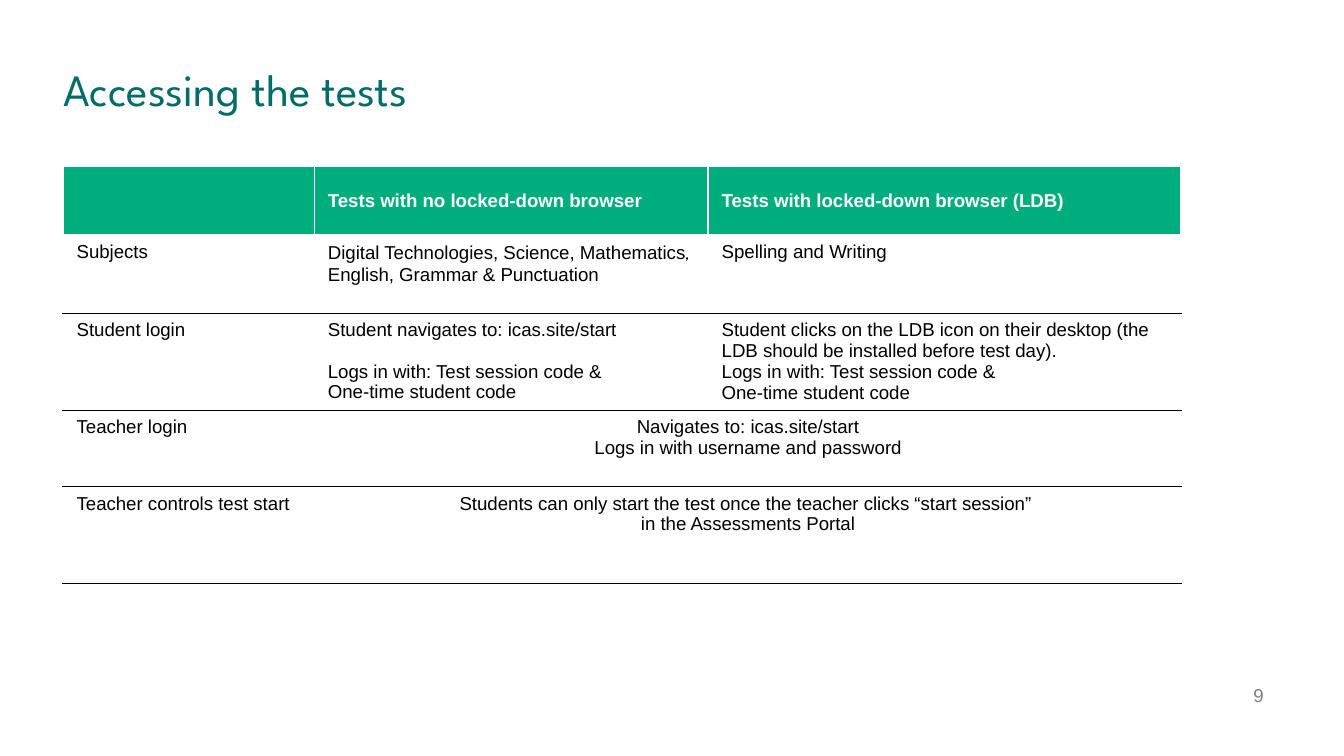
import pptx
import pptx.util
import pptx.dml.color
import pptx.enum.text
import pptx.oxml
import pptx.oxml.ns

Inches = pptx.util.Inches
Pt = pptx.util.Pt
ALIGN = pptx.enum.text.PP_ALIGN
ANCHOR = pptx.enum.text.MSO_ANCHOR

COLORS = {
    "white": "FFFFFF",
    "black": "000000",
    "header": "00AD7D",
    "title": "006D68",
    "number": "808080",
}
SLIDE_WIDTH = 10
SLIDE_HEIGHT = SLIDE_WIDTH * 9 / 16
LEFT = 0.47
COLUMN_WIDTHS = [1.87, 2.93, 3.52]
ROW_HEIGHTS = [0.51, 0.58, 0.71, 0.57, 0.72]

HEADINGS = ["", "Tests with no locked-down browser", "Tests with locked-down browser (LDB)"]
LOGIN_CODES = ["Logs in with: Test session code &", "One-time student code"]
# One entry per row: label, then the cells beside it; a single cell spans both columns.
# A line is a string or a list of (text, font) runs.
ROWS = [
    ("Subjects",
     [[("Digital Technologies, Science, Mathematics", "Arial"), (", ", "Cabin"),
       ("English, Grammar & Punctuation", "Arial")]],
     ["Spelling and Writing"]),
    ("Student login",
     ["Student navigates to: icas.site/start"] + LOGIN_CODES,
     ["Student clicks on the LDB icon on their desktop (the LDB should be "
      "installed before test day)."] + LOGIN_CODES),
    ("Teacher login",
     ["Navigates to: icas.site/start", "Logs in with username and password"]),
    ("Teacher controls test start",
     ["Students can only start the test once the teacher clicks “start session” ",
      "in the Assessments Portal"]),
]


def rgb(name):
    return pptx.dml.color.RGBColor.from_string(COLORS[name])


def write_text(frame, lines, size=10, font="Arial", color="black", bold=False,
               align=ALIGN.LEFT, anchor=ANCHOR.TOP):
    frame.word_wrap = True
    frame.vertical_anchor = anchor
    for index, line in enumerate(lines):
        paragraph = frame.add_paragraph() if index else frame.paragraphs[0]
        paragraph.alignment = align
        for text, face in [(line, font)] if isinstance(line, str) else line:
            run = paragraph.add_run()
            run.text = text
            run.font.name = face
            run.font.size = Pt(size)
            run.font.bold = bold
            run.font.color.rgb = rgb(color)


def set_borders(cell, **sides):
    """Each side is a (colour, points) pair, given in the order L, R, T, B."""
    properties = cell._tc.get_or_add_tcPr()
    for index, (side, (color, points)) in enumerate(sides.items()):
        properties.insert(index, pptx.oxml.parse_xml(
            f'<a:ln{side} {pptx.oxml.ns.nsdecls("a")} w="{Pt(points)}"><a:solidFill>'
            f'<a:srgbClr val="{COLORS[color]}"/></a:solidFill></a:ln{side}>'))


def format_cell(cell, fill, top, bottom):
    cell.fill.solid()
    cell.fill.fore_color.rgb = rgb(fill)
    side = ("white", 1)
    set_borders(cell, L=side, R=side, T=top, B=bottom)


def add_title(slide, text):
    title = slide.shapes.title
    title.left, title.top = Inches(LEFT), Inches(0.46)
    title.width, title.height = Inches(8.61), Inches(0.4)
    frame = title.text_frame
    frame.margin_left = frame.margin_top = frame.margin_right = frame.margin_bottom = 0
    write_text(frame, [text], size=24, font="League Spartan", color="title")


def add_access_table(slide):
    table = slide.shapes.add_table(
        len(ROW_HEIGHTS), len(COLUMN_WIDTHS), Inches(LEFT), Inches(1.24),
        Inches(sum(COLUMN_WIDTHS)), Inches(sum(ROW_HEIGHTS))).table
    for column, width in zip(table.columns, COLUMN_WIDTHS):
        column.width = Inches(width)
    for row, height in zip(table.rows, ROW_HEIGHTS):
        row.height = Inches(height)

    # Header row
    white_line, rule = ("white", 1), ("black", 0.25)
    for column, heading in enumerate(HEADINGS):
        cell = table.cell(0, column)
        format_cell(cell, "header", white_line, white_line)
        if heading:
            write_text(cell.text_frame, [heading], color="white", bold=True)
        cell.vertical_anchor = ANCHOR.MIDDLE

    # Body rows
    for row, (label, *answers) in enumerate(ROWS, start=1):
        for column in range(len(COLUMN_WIDTHS)):
            format_cell(table.cell(row, column), "white",
                        white_line if row == 1 else rule, rule)
        write_text(table.cell(row, 0).text_frame, [label])
        shared = len(answers) == 1
        if shared:
            table.cell(row, 1).merge(table.cell(row, 2))
        for column, lines in enumerate(answers, start=1):
            write_text(table.cell(row, column).text_frame, lines,
                       align=ALIGN.CENTER if shared else ALIGN.LEFT)

    # Gap that lines up the login codes of both columns
    table.cell(2, 1).text_frame.paragraphs[1].space_before = Pt(11)


def add_page_number(slide, number):
    box = slide.shapes.add_textbox(Inches(7.17), Inches(5.06), Inches(2.33), Inches(0.22))
    write_text(box.text_frame, [number], color="number", align=ALIGN.RIGHT,
               anchor=ANCHOR.MIDDLE)


def main():
    presentation = pptx.Presentation()
    presentation.slide_width = Inches(SLIDE_WIDTH)
    presentation.slide_height = Inches(SLIDE_HEIGHT)
    slide = presentation.slides.add_slide(presentation.slide_layouts[5])
    add_title(slide, "Accessing the tests")
    add_access_table(slide)
    add_page_number(slide, "9")
    presentation.save("out.pptx")


if __name__ == "__main__":
    main()
